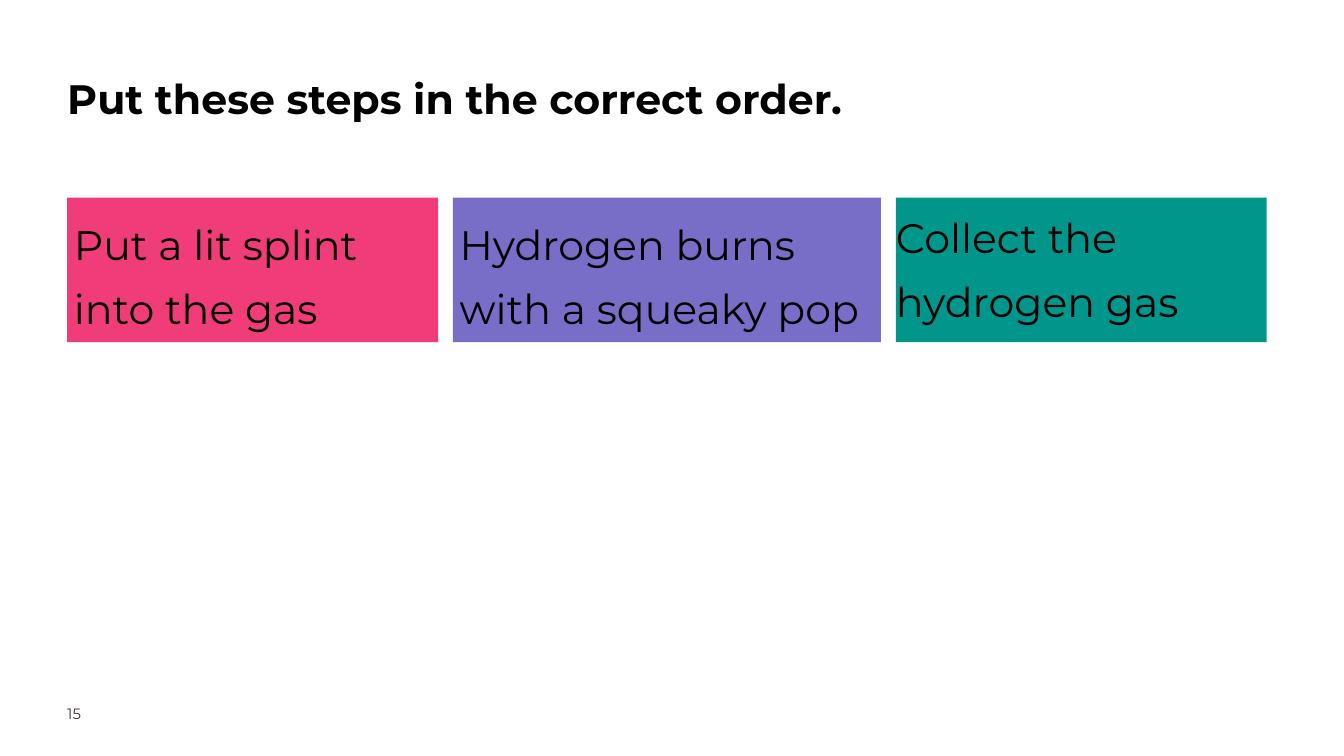
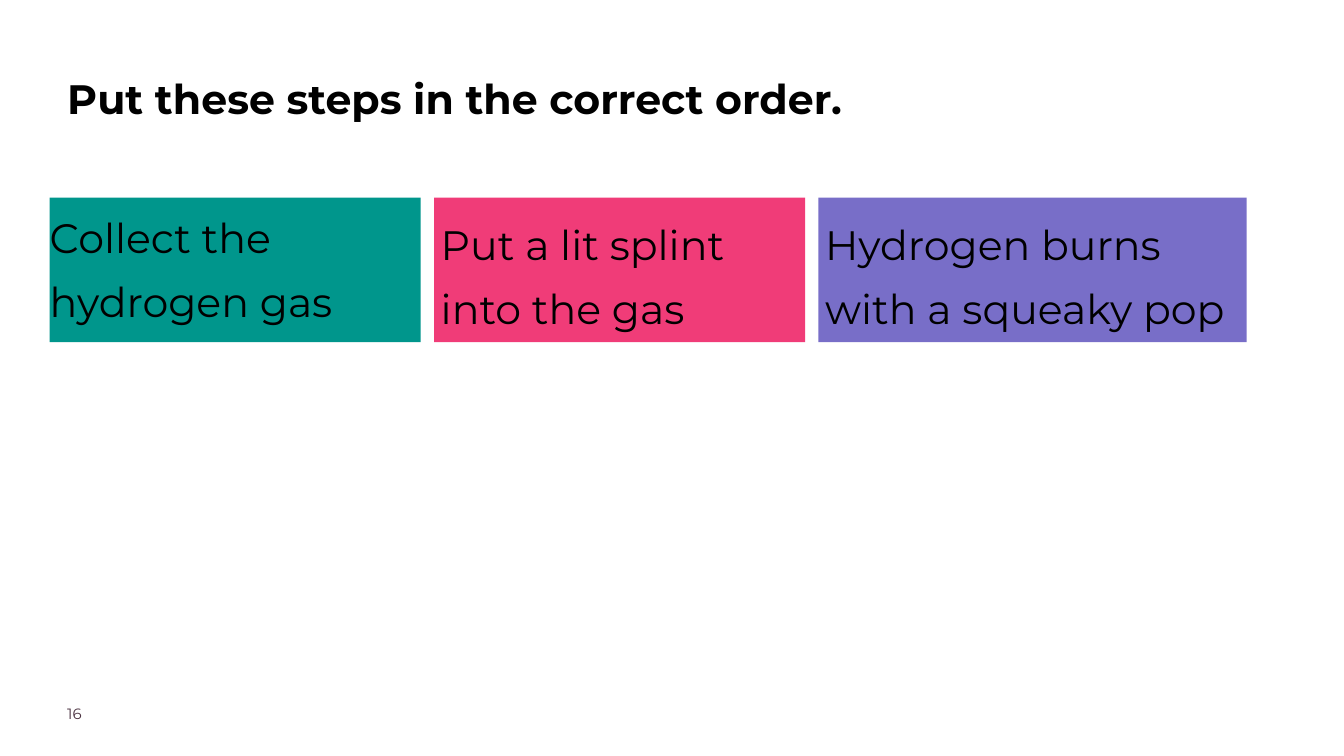
import pptx
import pptx.util
import pptx.dml.color
import pptx.enum.shapes
import pptx.enum.text

RGB = pptx.dml.color.RGBColor
BLACK = RGB(0x00, 0x00, 0x00)
PLUM = RGB(0x4B, 0x32, 0x41)
TEAL = RGB(0x00, 0x96, 0x8C)
PINK = RGB(0xF0, 0x3C, 0x78)
VIOLET = RGB(0x78, 0x6E, 0xC8)
FONT = "Montserrat"

TITLE = "Put these steps in the correct order."
# text, fill, width, inset
STEPS = {
    "collect": ("Collect the hydrogen gas", TEAL, 552, 0),
    "light": ("Put a lit splint into the gas", PINK, 552, 10),
    "pop": ("Hydrogen burns with a squeaky pop", VIOLET, 637, 10),
}
# page number, left edge, gap, order of steps
SLIDES = [
    (15, 100, 22, ["light", "pop", "collect"]),
    (16, 74, 20, ["collect", "light", "pop"]),
]

WIDTH, HEIGHT = 2000, 1125
MARGIN = 100
STEP_TOP, STEP_HIGH = 294, 215


def px(n):
    """Turn px (100 to the inch) into EMU."""
    return pptx.util.Emu(n * 9144)


def write(shape, text, size, color=BLACK, bold=False, inset=0, line=1.0, after=0):
    frame = shape.text_frame
    frame.word_wrap = True
    frame.auto_size = pptx.enum.text.MSO_AUTO_SIZE.NONE
    frame.vertical_anchor = pptx.enum.text.MSO_ANCHOR.TOP
    frame.margin_left = frame.margin_right = px(inset)
    frame.margin_top = frame.margin_bottom = px(inset)
    frame.text = text
    para = frame.paragraphs[0]
    para.alignment = pptx.enum.text.PP_ALIGN.LEFT
    para.line_spacing = line
    para.space_after = pptx.util.Pt(after)
    para.font.name = FONT
    para.font.size = pptx.util.Pt(size)
    para.font.bold = bold
    para.font.color.rgb = color


def add_title(slide):
    title = slide.shapes.title
    title.left, title.top = px(MARGIN), px(98)
    title.width, title.height = px(1220), px(178)
    write(title, TITLE, 44, bold=True, line=1.15)


def add_page(slide, page):
    box = slide.shapes.add_textbox(px(MARGIN), px(1048), px(157), px(39))
    write(box, str(page), 16, PLUM)


def add_steps(slide, left, gap, order):
    for key in order:
        text, fill, width, inset = STEPS[key]
        card = slide.shapes.add_shape(
            pptx.enum.shapes.MSO_SHAPE.RECTANGLE,
            px(left), px(STEP_TOP), px(width), px(STEP_HIGH))
        card.shadow.inherit = False
        card.fill.solid()
        card.fill.fore_color.rgb = fill
        card.line.fill.background()
        write(card, text, 44, inset=inset, line=1.3, after=20)
        left += width + gap


def main():
    deck = pptx.Presentation()
    deck.slide_width, deck.slide_height = px(WIDTH), px(HEIGHT)
    layout = deck.slide_layouts.get_by_name("Title Only")
    for page, left, gap, order in SLIDES:
        slide = deck.slides.add_slide(layout)
        add_title(slide)
        add_page(slide, page)
        add_steps(slide, left, gap, order)
    deck.save("out.pptx")


if __name__ == "__main__":
    main()
